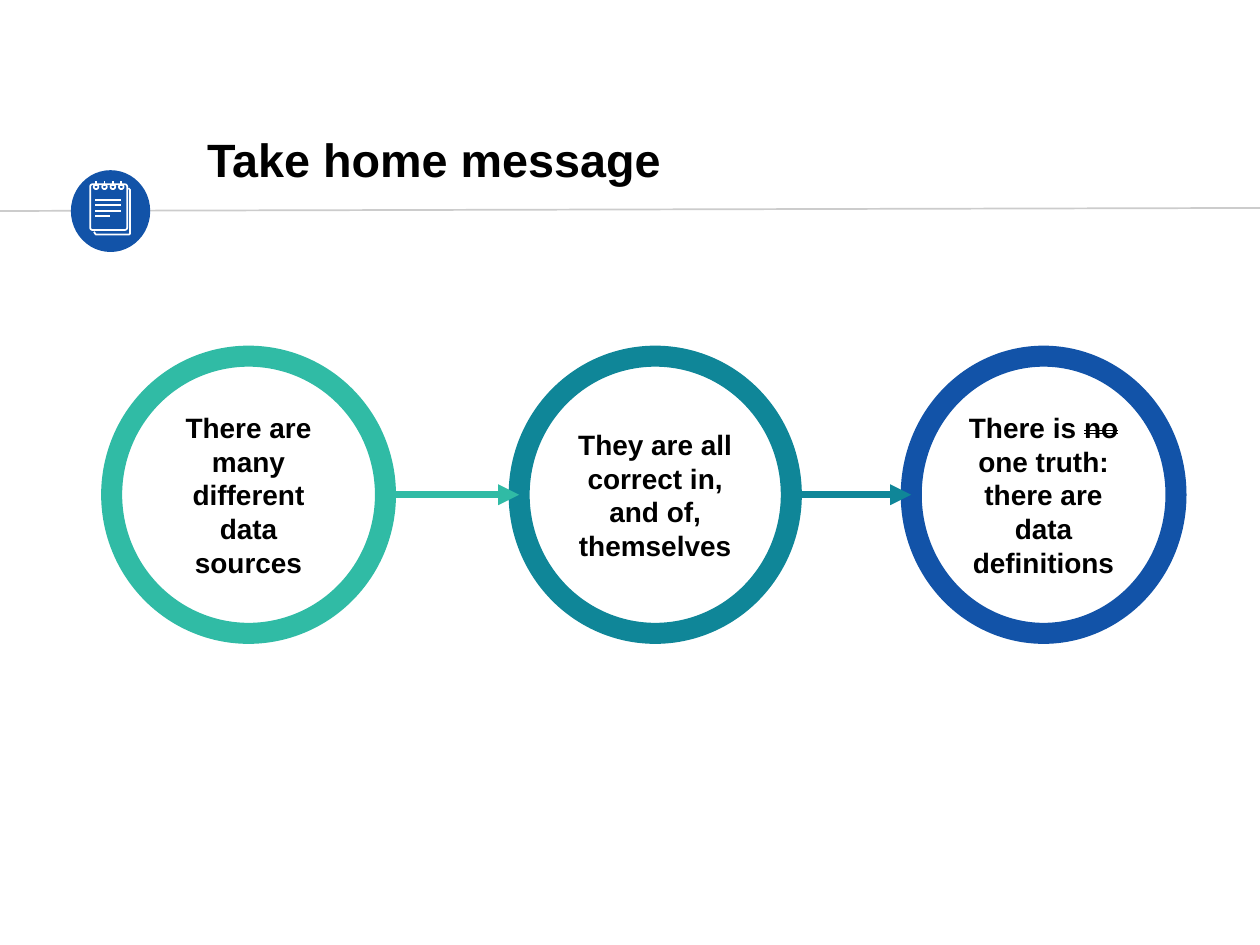
from pptx import Presentation
from pptx.dml.color import RGBColor
from pptx.enum.shapes import MSO_CONNECTOR, MSO_SHAPE
from pptx.enum.text import MSO_ANCHOR, PP_ALIGN
from pptx.oxml.ns import qn
from pptx.util import Inches, Pt
from lxml.etree import SubElement

WIDTH = Inches(7.5)
HEIGHT = WIDTH * 3 // 4
COLUMNS = 750
ROWS = COLUMNS * 3 / 4

BLACK = RGBColor(0x00, 0x00, 0x00)
WHITE = RGBColor(0xFF, 0xFF, 0xFF)
GREY = RGBColor(0xCC, 0xCC, 0xCC)
GREEN = RGBColor(0x30, 0xBB, 0xA5)
TEAL = RGBColor(0x0F, 0x86, 0x98)
BLUE = RGBColor(0x12, 0x53, 0xA8)

INSET = Inches(0.07)
FRAME_FORMAT = {
    "word_wrap": True,
    "vertical_anchor": MSO_ANCHOR.MIDDLE,
    "margin_left": INSET,
    "margin_right": INSET,
    "margin_top": INSET,
    "margin_bottom": INSET,
}
FONT_FORMAT = {"name": "Arial", "bold": True}

RING_TOP, RING_HEIGHT = 212, 165
RING_MIDDLE = RING_TOP + RING_HEIGHT / 2
RINGS = [
    (66.5, 163, GREEN, [("There are many different data sources", False)]),
    (309, 162, TEAL, [("They are all correct in, and of, themselves", False)]),
    (542.4, 157.6, BLUE, [("There is ", False), ("no", True),
                          (" one truth: there are data definitions", False)]),
]


def across(columns):
    return round(WIDTH * columns / COLUMNS)


def down(rows):
    return round(HEIGHT * rows / ROWS)


def apply_format(target, values):
    for name, value in values.items():
        setattr(target, name, value)


def set_outline(shape, color, points):
    shape.line.color.rgb = color
    shape.line.width = Pt(points)


def add_outline_shape(slide, kind, box, color, points):
    left, top, width, height = box
    shape = slide.shapes.add_shape(
        kind, across(left), down(top), across(width), down(height))
    shape.shadow.inherit = False
    shape.fill.background()
    set_outline(shape, color, points)
    return shape


def add_line(slide, start, end, color, points, arrow=False):
    connector = slide.shapes.add_connector(
        MSO_CONNECTOR.STRAIGHT,
        across(start[0]), down(start[1]), across(end[0]), down(end[1]))
    set_outline(connector, color, points)
    if arrow:
        SubElement(connector.line._get_or_add_ln(), qn("a:tailEnd"), type="triangle")
    SubElement(connector._element.spPr, qn("a:effectLst"))


def write_text(shape, pieces, size, alignment):
    frame = shape.text_frame
    apply_format(frame, FRAME_FORMAT)
    paragraph = frame.paragraphs[0]
    paragraph.alignment = alignment
    for text, struck in pieces:
        run = paragraph.add_run()
        run.text = text
        apply_format(run.font, {**FONT_FORMAT, "size": Pt(size)})
        run.font.color.rgb = BLACK
        if struck:
            run._r.get_or_add_rPr().set("strike", "dblStrike")


def add_title(slide, text):
    box = slide.shapes.add_textbox(across(116.3), down(76.6), across(318), down(36))
    write_text(box, [(text, False)], 20, PP_ALIGN.LEFT)


def add_back_page(slide):
    corners = [(56, 138), (57, 139.5), (77, 139.5), (77.5, 139), (77.5, 113), (76.5, 112)]
    points = [(across(column), down(row)) for column, row in corners]
    builder = slide.shapes.build_freeform(*points[0])
    builder.add_line_segments(points[1:], close=False)
    page = builder.convert_to_shape()
    page.shadow.inherit = False
    page.fill.background()
    set_outline(page, WHITE, 0.75)


def add_notepad_icon(slide):
    badge = add_outline_shape(slide, MSO_SHAPE.OVAL, (42.2, 101.3, 47.2, 48.7), BLUE, 0.75)
    badge.fill.solid()
    badge.fill.fore_color.rgb = BLUE
    badge.line.fill.background()
    add_back_page(slide)
    page = add_outline_shape(
        slide, MSO_SHAPE.ROUNDED_RECTANGLE, (53.7, 109.7, 22, 27.2), WHITE, 0.75)
    page.adjustments[0] = 0.06
    for index in range(4):
        hole = 57.2 + 5 * index
        add_outline_shape(
            slide, MSO_SHAPE.OVAL, (hole - 1.4, 109.8, 2.8, 2.8), WHITE, 0.75)
        add_line(slide, (hole, 108), (hole, 111), WHITE, 0.75)
    for index, length in enumerate([15.5, 15.5, 15.5, 8.5]):
        row = 119 + 3.2 * index
        add_line(slide, (56.8, row), (56.8 + length, row), WHITE, 0.75)


def add_ring(slide, left, width, color, pieces):
    ring = add_outline_shape(
        slide, MSO_SHAPE.OVAL, (left, RING_TOP, width, RING_HEIGHT), color, 9)
    write_text(ring, pieces, 12, PP_ALIGN.CENTER)


def main():
    presentation = Presentation()
    presentation.slide_width = WIDTH
    presentation.slide_height = HEIGHT
    slide = presentation.slides.add_slide(presentation.slide_layouts[6])
    add_line(slide, (0, 125.6), (COLUMNS, 123.8), GREY, 0.75)
    add_notepad_icon(slide)
    add_title(slide, "Take home message")
    for ring in RINGS:
        add_ring(slide, *ring)
    for (left, width, color, _), following in zip(RINGS, RINGS[1:]):
        add_line(slide, (left + width, RING_MIDDLE), (following[0], RING_MIDDLE),
                 color, 3, arrow=True)
    presentation.save("out.pptx")


if __name__ == "__main__":
    main()
